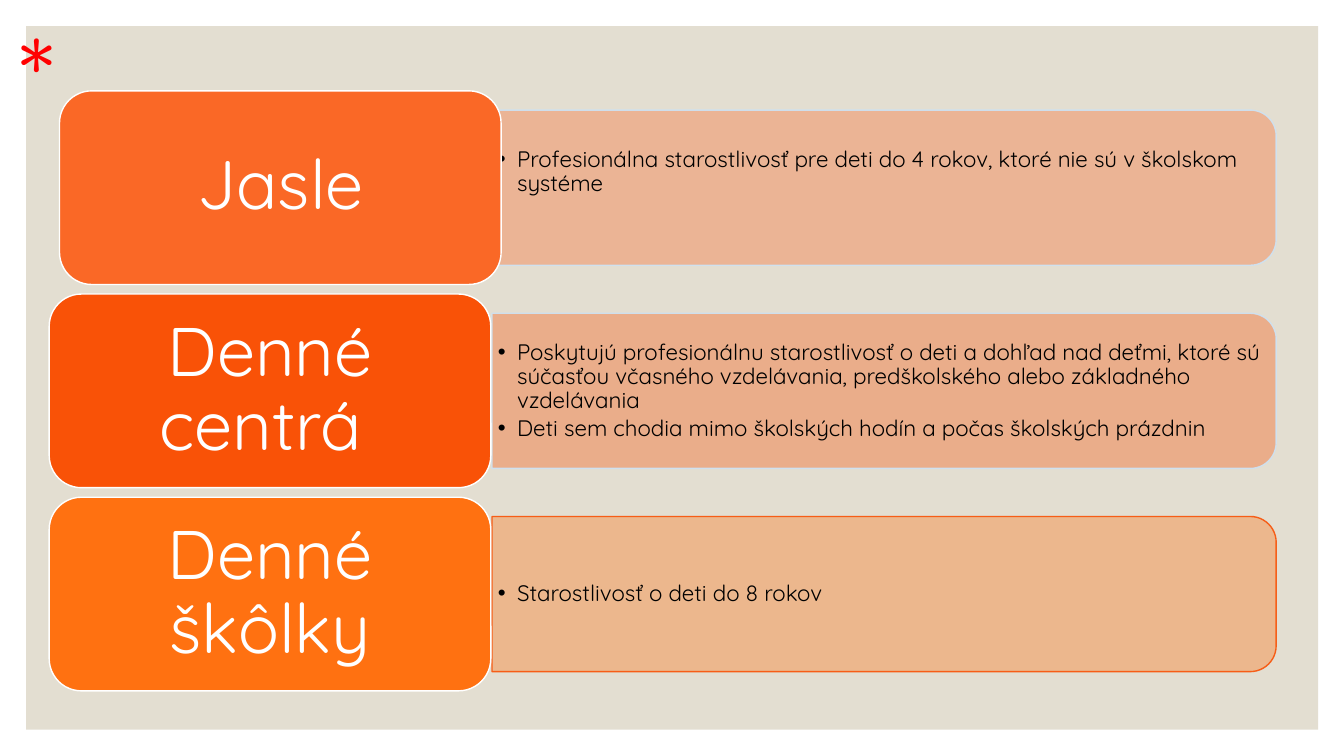
from lxml import etree
from pptx import Presentation
from pptx import util as u
from pptx.dml.color import RGBColor
from pptx.enum import shapes, text
from pptx.oxml import ns

Cm, Pt = u.Cm, u.Pt
FONT = "Quicksand"
BLACK = RGBColor(0x00, 0x00, 0x00)
WHITE = RGBColor(0xFF, 0xFF, 0xFF)
RED = RGBColor(0xFF, 0x00, 0x00)
BEIGE = RGBColor(0xE3, 0xDE, 0xD1)
PALE_BLUE = RGBColor(0xCD, 0xE3, 0xF5)
CORAL = RGBColor(0xFA, 0x68, 0x26)
ORANGE_RED = RGBColor(0xF9, 0x52, 0x07)
ORANGE = RGBColor(0xFF, 0x71, 0x11)

ROW_TOP, ROW_STEP = 2.29, 5.12
LABEL_W, LABEL_H = 11.13, 4.88
PANEL_LEFT, PANEL_W, PANEL_H = 12.4, 19.76, 3.91
LIST_LEFT, LIST_W, LIST_H = 12.37, 19.58, 3.53

ROWS = [
    ("Jasle", 1.5, CORAL, PALE_BLUE, 0.84,
     ["Profesionálna starostlivosť pre deti do 4 rokov, ktoré nie sú v školskom systéme"]),
    ("Denné centrá ", 1.24, ORANGE_RED, PALE_BLUE, 0.08,
     ["Poskytujú profesionálnu starostlivosť o deti a dohľad nad deťmi, ktoré sú "
      "súčasťou včasného vzdelávania, predškolského alebo základného vzdelávania",
      "Deti sem chodia mimo školských hodín a počas školských prázdnin"]),
    ("Denné škôlky", 1.24, ORANGE, ORANGE_RED, 0.08,
     ["Starostlivosť o deti do 8 rokov"]),
]


def write(p, content, size, color, align=text.PP_ALIGN.LEFT, spacing=1.0, after=0):
    p.alignment = align
    p.line_spacing = spacing
    p.space_before, p.space_after = Pt(0), Pt(after)
    r = p.add_run()
    r.text = content
    r.font.name, r.font.size, r.font.bold = FONT, Pt(size), False
    r.font.color.rgb = color


def set_frame(tf, side, top, bottom, anchor):
    tf.word_wrap = True
    tf.auto_size = text.MSO_AUTO_SIZE.NONE
    tf.vertical_anchor = anchor
    tf.margin_left = tf.margin_right = Cm(side)
    tf.margin_top, tf.margin_bottom = Cm(top), Cm(bottom)


def set_alpha(fill_parent, percent):
    clr = fill_parent.find(ns.qn("a:solidFill"))[0]
    etree.SubElement(clr, ns.qn("a:alpha")).set("val", str(percent * 1000))


def add_block(s, kind, left, top, width, height, fill, line=None):
    sp = s.shapes.add_shape(kind, Cm(left), Cm(top), Cm(width), Cm(height))
    sp.shadow.inherit = False
    sp.fill.solid()
    sp.fill.fore_color.rgb = fill
    if line is None:
        sp.line.fill.background()
    else:
        sp.line.color.rgb = line
        sp.line.width = Pt(1)
    return sp


def add_panel(s, middle, fill, line):
    center = PANEL_LEFT + PANEL_W / 2
    sp = add_block(s, shapes.MSO_SHAPE.ROUND_2_SAME_RECTANGLE,
                   center - PANEL_H / 2, middle - PANEL_W / 2,
                   PANEL_H, PANEL_W, fill, line)
    sp.rotation = 90
    sp_pr = sp.element.spPr
    set_alpha(sp_pr, 35)
    set_alpha(sp_pr.find(ns.qn("a:ln")), 90)


def add_bullet(p):
    p.level = 1
    p_pr = p._p.get_or_add_pPr()
    p_pr.set("marL", str(Cm(0.48)))
    p_pr.set("indent", str(-Cm(0.48)))
    etree.SubElement(p_pr, ns.qn("a:buFont")).set("typeface", "Arial")
    etree.SubElement(p_pr, ns.qn("a:buChar")).set("char", "•")


def place_list(s, sp, middle, bottom, items):
    s.shapes._spTree.append(sp.element)
    sp.left, sp.top = Cm(LIST_LEFT), Cm(middle - LIST_H / 2)
    sp.width, sp.height = Cm(LIST_W), Cm(LIST_H)
    tf = sp.text_frame
    set_frame(tf, 0.18, 0.08, bottom, text.MSO_ANCHOR.MIDDLE)
    for i, item in enumerate(items):
        p = tf.add_paragraph() if i else tf.paragraphs[0]
        write(p, item, 16, BLACK, spacing=0.9, after=2.4)
        add_bullet(p)


def add_label(s, left, top, fill, name):
    sp = add_block(s, shapes.MSO_SHAPE.ROUNDED_RECTANGLE,
                   left, top, LABEL_W, LABEL_H, fill, WHITE)
    set_frame(sp.text_frame, 0.75, 0.5, 0.5, text.MSO_ANCHOR.MIDDLE)
    write(sp.text_frame.paragraphs[0], name, 49, WHITE,
          align=text.PP_ALIGN.CENTER, spacing=0.9)


def add_asterisk(s):
    sp = s.shapes.add_textbox(Cm(0.23), Cm(0), Cm(2.21), Cm(3.68))
    set_frame(sp.text_frame, 0.25, 0.13, 0.13, text.MSO_ANCHOR.TOP)
    write(sp.text_frame.paragraphs[0], "*", 80, RED)


def main():
    prs = Presentation()
    prs.slide_width, prs.slide_height = Cm(33.87), Cm(19.05)
    s = prs.slides.add_slide(prs.slide_layouts.get_by_name("Comparison"))
    title, *bodies = list(s.placeholders)
    lists, spare = bodies[:len(ROWS)], bodies[len(ROWS):]
    for sp in [title, *spare]:
        sp.element.getparent().remove(sp.element)

    add_block(s, shapes.MSO_SHAPE.RECTANGLE, 0.66, 0.66, 32.56, 17.73, BEIGE)
    for i, (name, left, fill, line, bottom, items) in enumerate(ROWS):
        top = ROW_TOP + i * ROW_STEP
        middle = top + LABEL_H / 2
        add_panel(s, middle, fill, line)
        place_list(s, lists[i], middle, bottom, items)
        add_label(s, left, top, fill, name)
    add_asterisk(s)
    prs.save("out.pptx")


if __name__ == "__main__":
    main()
